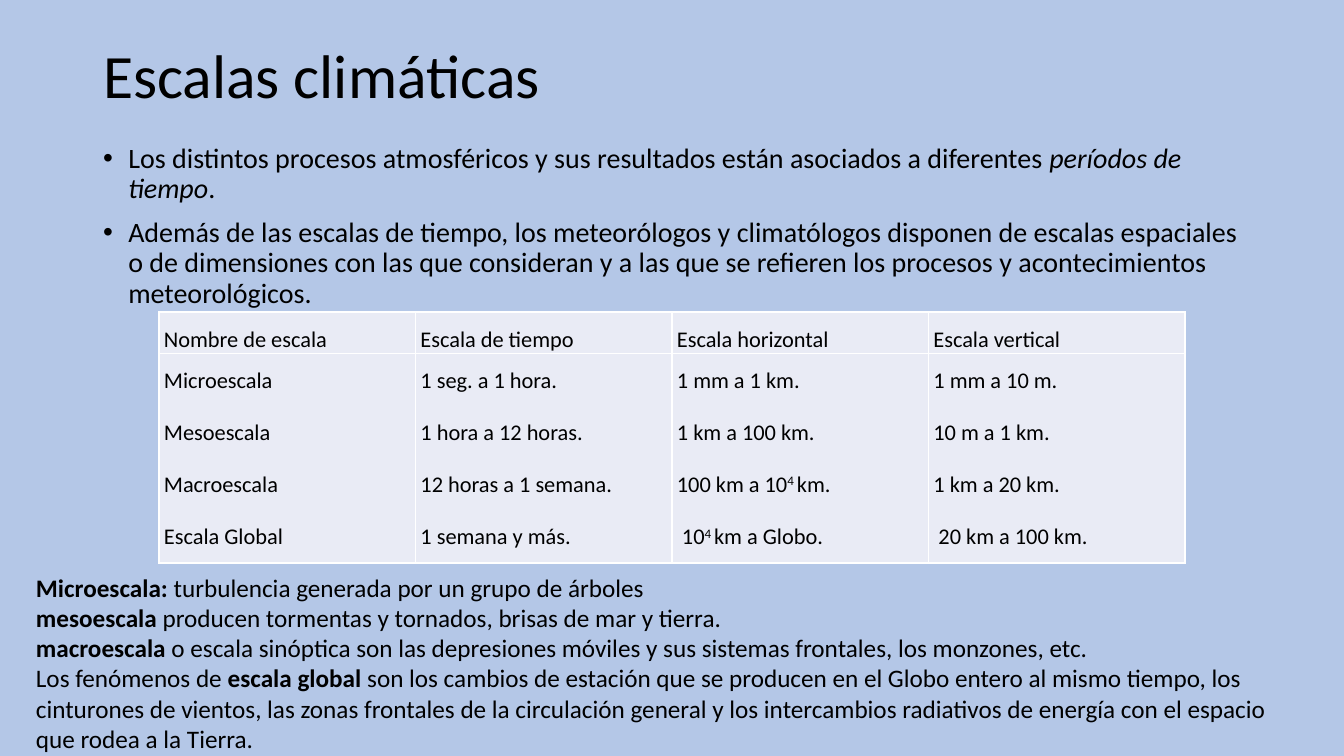
"""Builds the slide on climate scales: two bullets, a table of scales and examples."""
from lxml import etree
from pptx import Presentation
from pptx import util as u
from pptx.dml.color import RGBColor
from pptx.enum import text
from pptx.oxml import ns

PX = 914400 / 100.8
SKY = RGBColor(0xB4, 0xC7, 0xE7)
PALE = RGBColor(0xE9, 0xEB, 0xF5)
BLACK = RGBColor(0, 0, 0)
WHITE = RGBColor(0xFF, 0xFF, 0xFF)
EMPHASIS = {"bold": {"b": "1"}, "italic": {"i": "1"}, "super": {"baseline": "30000"}}


def px(*lengths):
    """Turns pixels into EMU."""
    return [u.Emu(round(length * PX)) for length in lengths]


def write(frame, lines, size, emphasis, formats):
    """Writes one paragraph a line; parts between bars get the emphasis."""
    for index, line in enumerate(lines):
        para = frame.add_paragraph() if index else frame.paragraphs[0]
        for name, value in formats.items():
            setattr(para, name, value)
        for order, part in enumerate(line.split("|")):
            if not part:
                continue
            span = para.add_run()
            span.text = part
            span.font.size = u.Pt(size)
            span.font.name = "Calibri"
            span.font.color.rgb = BLACK
            if order % 2:
                for name, value in EMPHASIS[emphasis].items():
                    span.font._element.set(name, value)


deck = Presentation()
deck.slide_width, deck.slide_height = px(1344, 756)
page = deck.slides.add_slide(deck.slide_layouts[1])
page.background.fill.solid()
page.background.fill.fore_color.rgb = SKY

title, body = page.placeholders
examples = page.shapes.add_textbox(*px(26, 567, 1291, 224))
places = [(title, (93, 40, 1159, 146)), (body, (93, 139, 1159, 480))]
for box, place in places:
    box.left, box.top, box.width, box.height = px(*place)
for box in (title, body, examples):
    frame = box.text_frame
    frame.word_wrap = True
    frame.auto_size = text.MSO_AUTO_SIZE.NONE
    frame.vertical_anchor = text.MSO_ANCHOR.TOP

left = {"alignment": text.PP_ALIGN.LEFT}
write(title.text_frame, ["Escalas climáticas"], 44, "bold", {**left, "line_spacing": 0.9})
write(body.text_frame, [
    "Los distintos procesos atmosféricos y sus resultados están asociados a diferentes "
    "|períodos de tiempo|.",
    "Además de las escalas de tiempo, los meteorólogos y climatólogos disponen de escalas "
    "espaciales o de dimensiones con las que consideran y a las que se refieren los procesos "
    "y acontecimientos meteorológicos.",
], 20, "italic", {**left, "line_spacing": 0.9, "space_before": u.Pt(10)})
for para in body.text_frame.paragraphs:
    properties = para._p.get_or_add_pPr()
    properties.set("marL", str(u.Inches(0.25)))
    properties.set("indent", str(-u.Inches(0.25)))
    etree.SubElement(properties, ns.qn("a:buChar")).set("char", "•")

write(examples.text_frame, [
    "|Microescala: |turbulencia generada por un grupo de árboles",
    "|mesoescala| producen tormentas y tornados, brisas de mar y tierra.",
    "|macroescala| o escala sinóptica son las depresiones móviles y sus sistemas frontales, "
    "los monzones, etc.",
    "Los fenómenos de |escala global |son los cambios de estación que se producen en el Globo "
    "entero al mismo tiempo, los cinturones de vientos, las zonas frontales de la circulación "
    "general y los intercambios radiativos de energía con el espacio que rodea a la Tierra.",
], 18, "bold", left)

SCALES = {
    "Nombre de escala": ["Microescala", "Mesoescala", "Macroescala", "Escala Global"],
    "Escala de tiempo": ["1 seg. a 1 hora.", "1 hora a 12 horas.", "12 horas a 1 semana.",
                         "1 semana y más."],
    "Escala horizontal": ["1 mm a 1 km.", "1 km a 100 km.", "100 km a 10|4 |km.",
                          " 10|4 |km a Globo."],
    "Escala vertical": ["1 mm a 10 m.", "10 m a 1 km.", "1 km a 20 km.", " 20 km a 100 km."],
}
table = page.shapes.add_table(2, len(SCALES), *px(159, 312, 1026, 244)).table
table.first_row = table.horz_banding = False
for row, height in zip(table.rows, px(34, 210)):
    row.height = height
cell_format = {"alignment": text.PP_ALIGN.JUSTIFY, "line_spacing": 1.5, "space_after": u.Pt(8)}
margins = dict(zip(("margin_left", "margin_right", "margin_top", "margin_bottom"),
                   px(5, 5, 0, 0)))
for column, (heading, values) in enumerate(SCALES.items()):
    for row, lines in enumerate(([heading], values)):
        cell = table.cell(row, column)
        for name, value in margins.items():
            setattr(cell, name, value)
        write(cell.text_frame, lines, 16, "super", cell_format)
        properties = cell._tc.get_or_add_tcPr()
        for side in ("a:lnL", "a:lnR", "a:lnT", "a:lnB"):
            border = etree.SubElement(properties, ns.qn(side), w=str(u.Pt(1)))
            paint = etree.SubElement(border, ns.qn("a:solidFill"))
            etree.SubElement(paint, ns.qn("a:srgbClr"), val=str(WHITE))
        cell.fill.solid()
        cell.fill.fore_color.rgb = PALE

deck.save("out.pptx")
